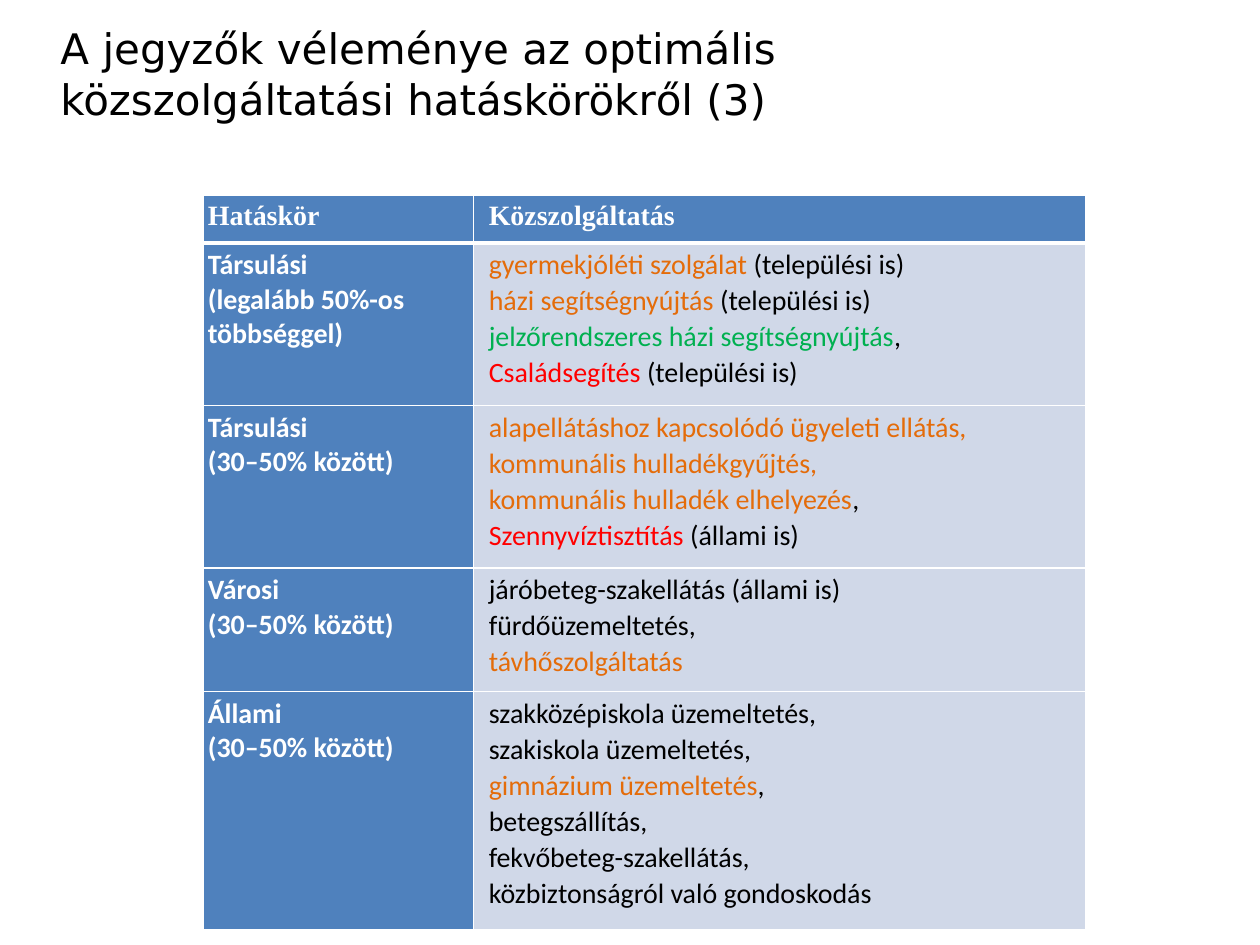
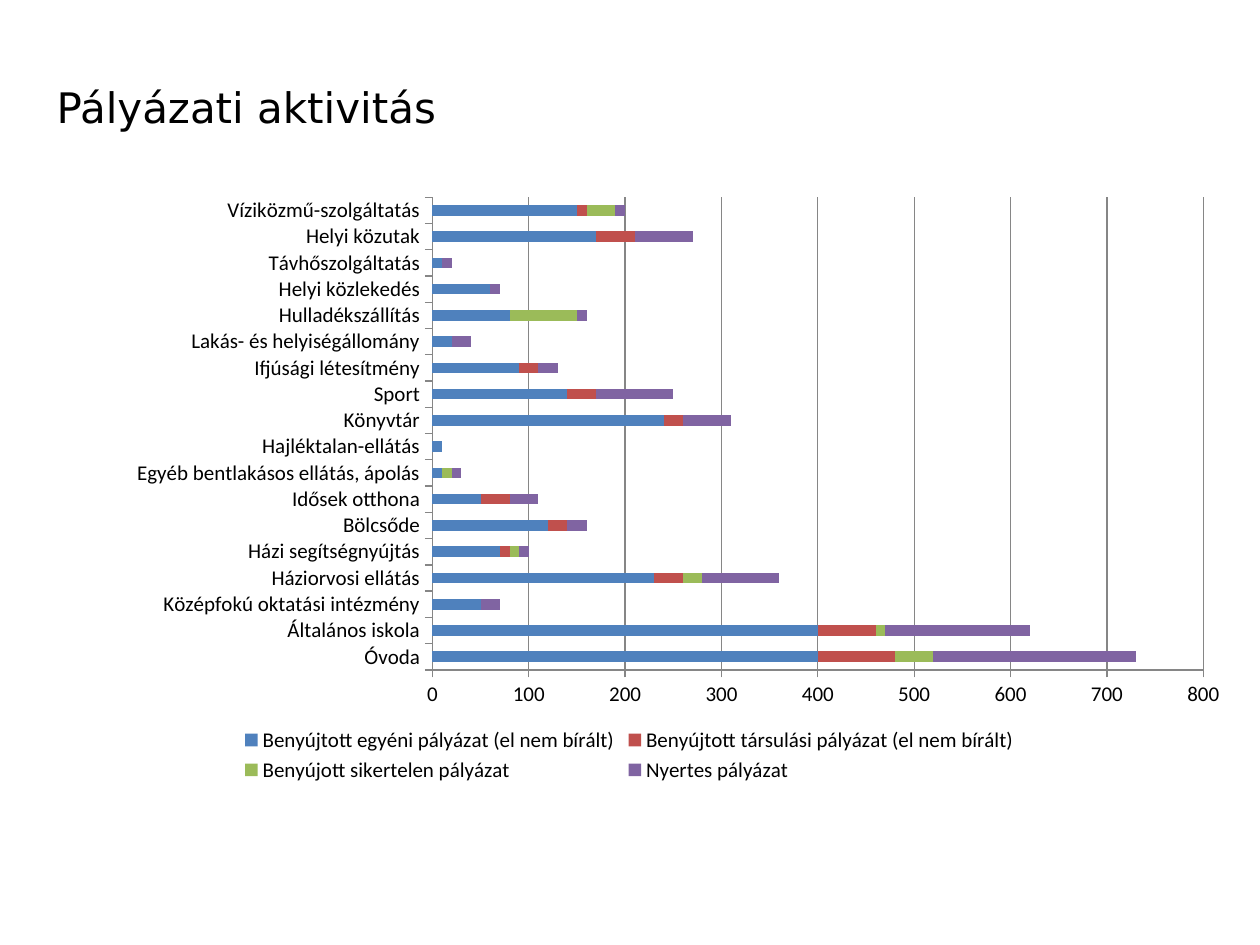
from pptx import Presentation
from pptx.chart import data as cd
from pptx.dml.color import RGBColor
from pptx.enum import chart as ch, text
from pptx.oxml import parse_xml
from pptx.oxml.ns import nsdecls
from pptx.util import Inches, Pt

THEME = {
    "black": "000000", "white": "FFFFFF", "blue": "4F81BD", "pale": "D0D8E8",
    "orange": "E46C0A", "green": "00B050", "red": "FF0000", "grid": "868686",
    "series": ["4F81BD", "C0504D", "9BBB59", "8064A2"],
    "title": {"name": "DejaVu Sans", "size": Pt(24), "bold": False},
    "header": {"name": "Times New Roman", "size": Pt(16), "bold": True},
    "label": {"name": "Calibri", "size": Pt(16), "bold": True},
    "body": {"name": "Calibri", "size": Pt(16), "bold": False},
    "chart": {"name": "Calibri", "size": Pt(12), "bold": False},
}


def style(font, kind, color):
    for name, value in THEME[kind].items():
        setattr(font, name, value)
    font.color.rgb = RGBColor.from_string(THEME[color])


def add_border(cell, side, points):
    cell._tc.get_or_add_tcPr().append(parse_xml(
        f'<a:ln{side} {nsdecls("a")} w="{Pt(points)}"><a:solidFill>'
        f'<a:srgbClr val="{THEME["white"]}"/></a:solidFill></a:ln{side}>'))


prs = Presentation()
prs.slide_width, prs.slide_height = Inches(10), Inches(7.5)

# Titles: wording, left, top, width, left inset
titles = [
    ("A jegyzők véleménye az optimális közszolgáltatási hatáskörökről (3)",
     0, 0.13, 6.42, 0.48),
    ("Pályázati aktivitás", 0.35, 0.6, 6.14, 0.1),
]
slides = []
for wording, left, top, width, inset in titles:
    s = prs.slides.add_slide(prs.slide_layouts[5])
    sp = s.shapes.title
    sp.left, sp.top, sp.width, sp.height = map(Inches, (left, top, width, 0.71))
    tf = sp.text_frame
    tf.text = wording
    tf.auto_size = text.MSO_AUTO_SIZE.NONE
    tf.vertical_anchor = text.MSO_ANCHOR.TOP
    tf.word_wrap = True
    tf.margin_left = Inches(inset)
    p = tf.paragraphs[0]
    p.alignment = text.PP_ALIGN.LEFT
    style(p.runs[0].font, "title", "black")
    slides.append(s)

# Table of competences: each line is a list of (wording, colour)
rows = [
    ("Hatáskör", 0.38, [[("Közszolgáltatás", "white")]]),
    ("Társulási\v(legalább 50%-os többséggel)", 1.29, [
        [("gyermekjóléti szolgálat ", "orange"), ("(települési is)", "black")],
        [("házi segítségnyújtás ", "orange"), ("(települési is)", "black")],
        [("jelzőrendszeres házi segítségnyújtás", "green"), (",", "black")],
        [("Családsegítés", "red"), (" (települési is)", "black")]]),
    ("Társulási\v(30–50% között)", 1.29, [
        [("alapellátáshoz kapcsolódó ügyeleti ellátás,", "orange")],
        [("kommunális hulladékgyűjtés,", "orange")],
        [("kommunális hulladék elhelyezés", "orange"), (",", "black")],
        [("Szennyvíztisztítás", "red"), (" (állami is)", "black")]]),
    ("Városi\v(30–50% között)", 0.98, [
        [("járóbeteg-szakellátás (állami is)", "black")],
        [("fürdőüzemeltetés,", "black")],
        [("távhőszolgáltatás", "orange")]]),
    ("Állami\v(30–50% között)", 1.89, [
        [("szakközépiskola üzemeltetés,", "black")],
        [("szakiskola üzemeltetés,", "black")],
        [("gimnázium üzemeltetés", "orange"), (",", "black")],
        [("betegszállítás,", "black")],
        [("fekvőbeteg-szakellátás,", "black")],
        [("közbiztonságról való gondoskodás", "black")]]),
]
table = slides[0].shapes.add_table(len(rows), 2, Inches(1.61), Inches(1.55),
                                   Inches(7.01), Inches(5.83)).table
for column, width in zip(table.columns, (2.15, 4.86)):
    column.width = Inches(width)

for i, (label, height, lines) in enumerate(rows):
    table.rows[i].height = Inches(height)
    for j, cell in enumerate(table.rows[i].cells):
        cell.margin_left = Inches(0.12 if j else 0.04)
        cell.margin_top = cell.margin_right = cell.margin_bottom = Inches(0.04)
        for side, points in (("L", 1), ("R", 1), ("T", 3 if i == 1 else 1),
                             ("B", 3 if i == 0 else 1)):
            add_border(cell, side, points)
        cell.fill.solid()
        cell.fill.fore_color.rgb = RGBColor.from_string(
            THEME["pale" if i and j else "blue"])

    p = table.cell(i, 0).text_frame.paragraphs[0]
    p.text = label
    for r in p.runs:
        style(r.font, "label" if i else "header", "white")

    tf = table.cell(i, 1).text_frame
    for n, line in enumerate(lines):
        p = tf.add_paragraph() if n else tf.paragraphs[0]
        if n:
            p.space_before = Pt(1)
        for wording, color in line:
            r = p.add_run()
            r.text = wording
            style(r.font, "body" if i else "header", color)

# Stacked bars of applications
data = cd.CategoryChartData()
data.categories = [
    "Óvoda", "Általános iskola", "Középfokú oktatási intézmény",
    "Háziorvosi ellátás", "Házi segítségnyújtás", "Bölcsőde", "Idősek otthona",
    "Egyéb bentlakásos ellátás, ápolás", "Hajléktalan-ellátás", "Könyvtár",
    "Sport", "Ifjúsági létesítmény", "Lakás- és helyiségállomány",
    "Hulladékszállítás", "Helyi közlekedés", "Távhőszolgáltatás",
    "Helyi közutak", "Víziközmű-szolgáltatás"]
data.add_series("Benyújtott egyéni pályázat (el nem bírált)", [
    400, 400, 50, 230, 70, 120, 50, 10, 10, 240, 140, 90, 20, 80, 60, 10, 170, 150])
data.add_series("Benyújtott társulási pályázat (el nem bírált)", [
    80, 60, 0, 30, 10, 20, 30, 0, 0, 20, 30, 20, 0, 0, 0, 0, 40, 10])
data.add_series("Benyújott sikertelen pályázat", [
    40, 10, 0, 20, 10, 0, 0, 10, 0, 0, 0, 0, 0, 70, 0, 0, 0, 30])
data.add_series("Nyertes pályázat", [
    210, 150, 20, 80, 10, 20, 30, 10, 0, 50, 80, 20, 20, 10, 10, 10, 60, 10])

chart = slides[1].shapes.add_chart(
    ch.XL_CHART_TYPE.BAR_STACKED, Inches(0.23), Inches(1.56), Inches(9.53),
    Inches(4.69), data).chart
style(chart.font, "chart", "black")
chart.has_title = False
chart.has_legend = True
chart.legend.position = ch.XL_LEGEND_POSITION.BOTTOM
chart.legend.include_in_layout = False

plot = chart.plots[0]
plot.gap_width, plot.overlap, plot.vary_by_categories = 150, 100, False
for series, color in zip(plot.series, THEME["series"]):
    series.format.fill.solid()
    series.format.fill.fore_color.rgb = RGBColor.from_string(color)

axis = chart.value_axis
axis.minimum_scale, axis.maximum_scale, axis.major_unit = 0, 800, 100
axis.has_major_gridlines = True
for line in (axis.major_gridlines.format.line, axis.format.line,
             chart.category_axis.format.line):
    line.color.rgb = RGBColor.from_string(THEME["grid"])
    line.width = Pt(0.75)
for axis in (chart.value_axis, chart.category_axis):
    axis.major_tick_mark = ch.XL_TICK_MARK.OUTSIDE
    axis.minor_tick_mark = ch.XL_TICK_MARK.NONE

plot_area = chart._chartSpace.xpath("c:chart/c:plotArea")[0]
for layout in plot_area.xpath("c:layout"):
    plot_area.remove(layout)
bounds = "".join(f'<c:{name} val="{value}"/>' for name, value in (
    ("layoutTarget", "inner"), ("xMode", "edge"), ("yMode", "edge"),
    ("x", 0.336), ("y", 0), ("w", 0.642), ("h", 0.801)))
plot_area.insert(0, parse_xml(
    f'<c:layout {nsdecls("c")}><c:manualLayout>{bounds}</c:manualLayout></c:layout>'))

prs.save("out.pptx")
